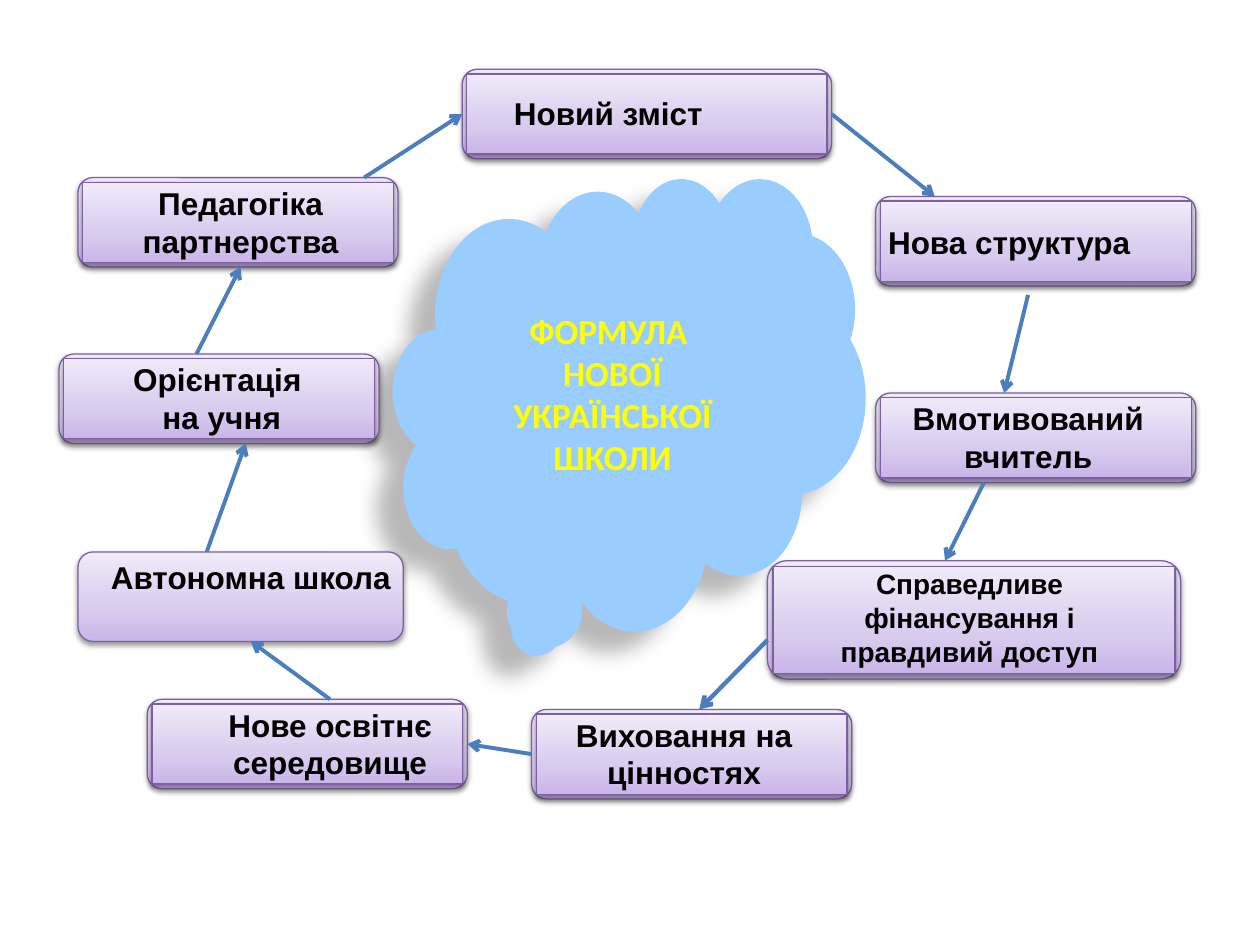
from lxml import etree
from pptx import Presentation
from pptx.dml.color import RGBColor
from pptx.enum.shapes import MSO_CONNECTOR, MSO_SHAPE
from pptx.enum.text import MSO_ANCHOR, PP_ALIGN
from pptx.oxml.ns import qn
from pptx.util import Pt

ROUND, RECT = MSO_SHAPE.ROUNDED_RECTANGLE, MSO_SHAPE.RECTANGLE
CLOUD, LINE = MSO_SHAPE.CLOUD_CALLOUT, MSO_CONNECTOR.STRAIGHT
LEFT, CENTER = PP_ALIGN.LEFT, PP_ALIGN.CENTER
MIDDLE = MSO_ANCHOR.MIDDLE

SKY = RGBColor(0x99, 0xCC, 0xFF)
YELLOW = RGBColor(0xFF, 0xFF, 0x00)
BLACK = RGBColor(0, 0, 0)
PURPLE = RGBColor(0x7D, 0x60, 0xA0)
BLUE = RGBColor(0x4B, 0x7E, 0xBC)
LILAC = ((0, RGBColor(0xC9, 0xB5, 0xE8)), (35, RGBColor(0xD8, 0xCB, 0xEE)),
         (100, RGBColor(0xF0, 0xEA, 0xF9)))

WIDE, HIGH = 182.9, 51.1    # usual box
TEXT_W = 174.2              # usual label width

# Boxes: name -> left, top, width, height, inset of the inner panel
BOXES = {
    "content": (264.2, 39.6, 211, HIGH, 2.6),
    "structure": (500.4, 112.3, WIDE, HIGH, 2.6),
    "teacher": (500.4, 224.6, WIDE, HIGH, 2.6),
    "autonomy": (44.6, 315.4, 185.8, HIGH, 0),
    "partners": (44.6, 101.5, WIDE, HIGH, 2.6),
    "pupil": (33.8, 202.3, WIDE, HIGH, 2.6),
    "funding": (438.5, 320.4, 236.2, 67.7, 3.3),
    "space": (84.2, 399.6, WIDE, HIGH, 2.6),
    "values": (303.8, 405.4, WIDE, HIGH, 2.6),
}

# Labels: name -> text, left, top, width, height, size, alignment
LABELS = {
    "partners": ("Педагогіка партнерства", 50.4, 101.5, TEXT_W, HIGH, 18, CENTER),
    "structure": ("Нова структура", 500.4, 123.8, 180, 29, 18, LEFT),
    "content": ("Новий зміст", 286.6, 50.4, 157.7, 29, 18, LEFT),
    "pupil": ("Орієнтація \nна учня", 39.6, 202.3, TEXT_W, HIGH, 18, CENTER),
    "teacher": ("Вмотивований вчитель", 500.4, 224.6, TEXT_W, HIGH, 18, CENTER),
    "funding": ("Справедливе фінансування і правдивий доступ",
                444.2, 320.4, 219.6, 65.5, 16, CENTER),
    "autonomy": ("Автономна школа", 56.2, 315.4, TEXT_W, HIGH, 18, CENTER),
    "values": ("Виховання на цінностях", 303.8, 405.4, TEXT_W, HIGH, 18, CENTER),
    "space": ("Нове освітнє середовище", 101.5, 399.6, TEXT_W, HIGH, 18, CENTER),
}


def add_node(parent, tag, **attrs):
    return etree.SubElement(parent, qn(tag), {k: str(v) for k, v in attrs.items()})


def set_shadow(shape, alpha, blur, dist, angle):
    shape.shadow.inherit = False
    effects = shape._element.spPr.find(qn("a:effectLst"))
    outer = add_node(effects, "a:outerShdw", blurRad=Pt(blur), dist=Pt(dist),
                     dir=angle * 60000, algn="ctr", rotWithShape=0)
    color = add_node(outer, "a:srgbClr", val=BLACK)
    add_node(color, "a:alpha", val=alpha * 1000)


def set_text(shape, text, size, font, color, align):
    frame = shape.text_frame
    frame.word_wrap = True
    frame.text = text
    for para in frame.paragraphs:
        para.alignment = align
        for run in para.runs:
            run.font.name = font
            run.font.size = Pt(size)
            run.font.bold = True
            run.font.color.rgb = color


def add_panel(shapes, kind, *place):
    panel = shapes.add_shape(kind, *map(Pt, place))
    grad = add_node(panel._element.spPr, "a:gradFill", rotWithShape=1)
    stops = add_node(grad, "a:gsLst")
    for pos, color in LILAC:
        stop = add_node(stops, "a:gs", pos=pos * 1000)
        add_node(stop, "a:srgbClr", val=color)
    add_node(grad, "a:lin", ang=270 * 60000, scaled=0)
    panel.line.color.rgb = PURPLE
    panel.line.width = Pt(0.75)
    set_shadow(panel, 38, 3.1, 1.6, 90)
    return panel


def add_box(shapes, left, top, width, height, inset):
    if not inset:
        return add_panel(shapes, ROUND, left, top, width, height)
    group = shapes.add_group_shape().shapes
    outer = add_panel(group, ROUND, left, top, width, height)
    add_panel(group, RECT, left + inset, top + inset,
              width - 2 * inset, height - 2 * inset)
    return outer


def add_label(shapes, text, left, top, width, height, size, align):
    label = shapes.add_textbox(Pt(left), Pt(top), Pt(width), Pt(height))
    set_text(label, text, size, "Arial", BLACK, align)
    return label


def add_arrow(shapes, start, end, begin=None, finish=None, weight=2.25):
    arrow = shapes.add_connector(LINE, *map(Pt, start + end))
    arrow.line.color.rgb = BLUE
    arrow.line.width = Pt(weight)
    add_node(arrow.line._get_or_add_ln(), "a:tailEnd", type="arrow")
    add_node(arrow._element.spPr, "a:effectLst")
    if begin:
        arrow.begin_connect(*begin)
    if finish:
        arrow.end_connect(*finish)


def add_cloud(shapes):
    cloud = shapes.add_shape(CLOUD, Pt(224.6), Pt(101.5), Pt(270), Pt(258.5))
    cloud.adjustments[0] = -0.193
    cloud.adjustments[1] = 0.493
    cloud.fill.solid()
    cloud.fill.fore_color.rgb = SKY
    cloud.line.fill.background()
    set_shadow(cloud, 28, 11.8, 19.7, 141)
    set_text(cloud, "ФОРМУЛА \vНОВОЇ УКРАЇНСЬКОЇ ШКОЛИ", 20, "Calibri", YELLOW, CENTER)
    cloud.text_frame.vertical_anchor = MIDDLE


def main():
    deck = Presentation()
    deck.slide_width, deck.slide_height = Pt(720), Pt(540)
    shapes = deck.slides.add_slide(deck.slide_layouts[6]).shapes

    # Centre, boxes and their labels
    add_cloud(shapes)
    box = {name: add_box(shapes, *data) for name, data in BOXES.items()}
    label = {name: add_label(shapes, *data) for name, data in LABELS.items()}

    # Arrows, clockwise from the top
    add_arrow(shapes, (475.2, 65.1), (534.2, 112.3), begin=(box["content"], 3))
    add_arrow(shapes, (587.5, 168.5), (573.8, 224.6))
    add_arrow(shapes, (562.3, 275.8), (540, 320.4))
    add_arrow(shapes, (438.5, 365.8), (399.6, 405.4), weight=2.5)
    add_arrow(shapes, (303.8, 430.9), (267.1, 425.1),
              (box["values"], 1), (box["space"], 3))
    add_arrow(shapes, (188.6, 399.6), (143.3, 366.5),
              (label["space"], 0), (label["autonomy"], 2))
    add_arrow(shapes, (118.1, 315.4), (140.4, 253.4))
    add_arrow(shapes, (112.3, 202.3), (137.5, 152.6), finish=(label["partners"], 2))
    add_arrow(shapes, (208.1, 101.5), (264.2, 65.1), finish=(box["content"], 1))

    deck.save("out.pptx")


if __name__ == "__main__":
    main()
